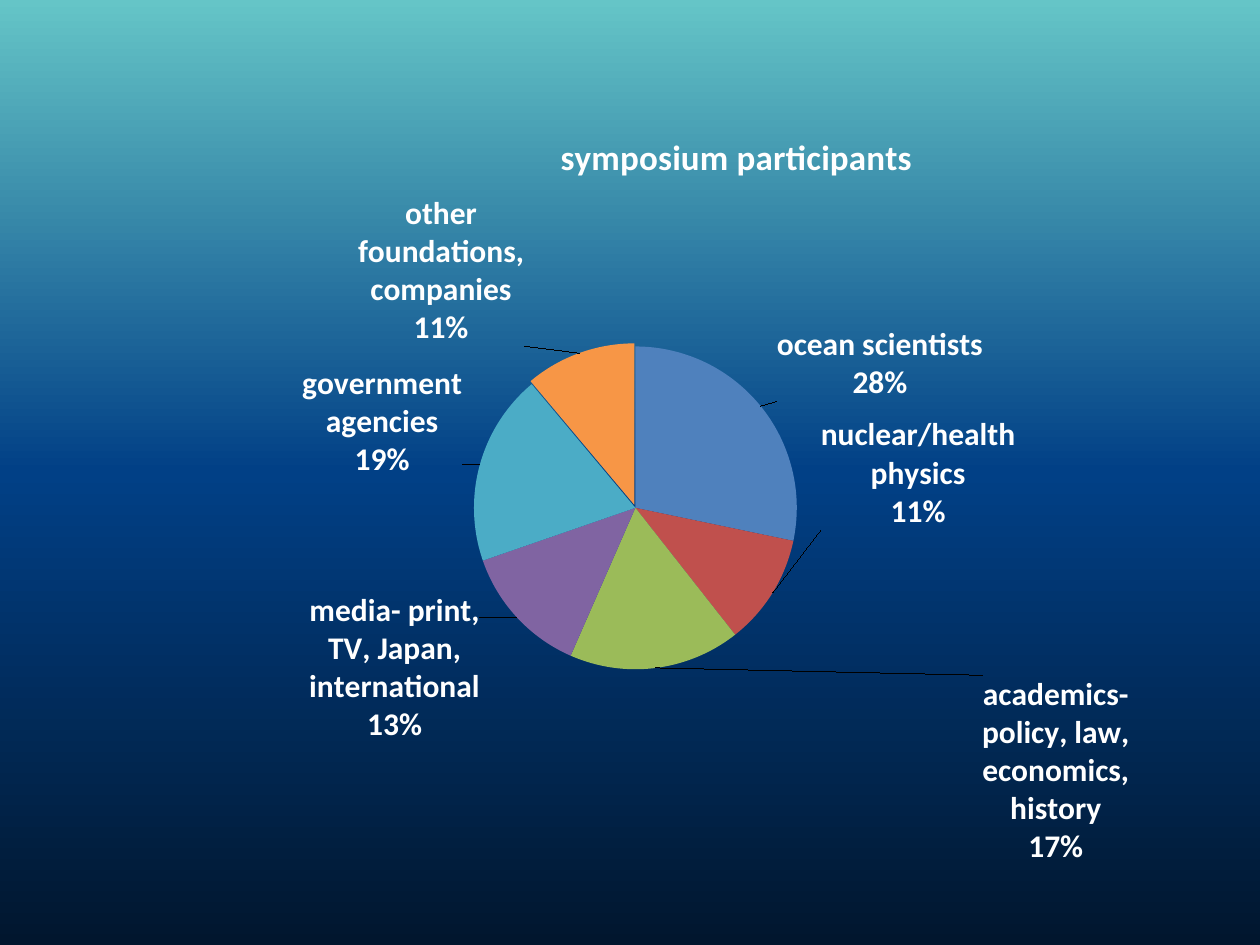
from copy import deepcopy

from lxml import etree
from pptx import Presentation
from pptx import util as u
from pptx.chart.data import CategoryChartData
from pptx.dml.color import RGBColor
from pptx.enum import chart as charts
from pptx.oxml.ns import qn

FONT = "Calibri"
WHITE = "FFFFFF"
BACKGROUND = ["65C5C7", "014086", "01162E"]
# Category, percentage, slice colour, label shift as fractions of the chart.
PARTICIPANTS = [
    ("ocean scientists", 28, "4F81BD", (0.01, 0)),
    ("nuclear/health physics", 11, "C0504D", (0.04, -0.23)),
    ("academics- policy, law, economics, history", 17, "9BBB59", (0.31, 0)),
    ("media- print, TV, Japan, international", 13, "8064A2", (-0.03, -0.04)),
    ("government agencies", 19, "4BACC6", (-0.01, 0.02)),
    ("other foundations, companies", 11, "F79646", (-0.05, 0)),
]


def color(value):
    """Turn a hex string into a colour."""
    return RGBColor.from_string(value)


def format_font(font, size, bold=False, fill=WHITE):
    """Set the typeface, size, weight and colour of a font."""
    font.name = FONT
    font.size = u.Pt(size)
    font.bold = bold
    font.color.rgb = color(fill)


def add_text(frame, content, **style):
    """Put formatted text in a frame."""
    run = frame.paragraphs[0].add_run()
    run.text = content
    format_font(run.font, **style)


def make_layout(target=None, **values):
    """Build a manual chart layout from fractions of the chart."""
    layout = etree.Element(qn("c:layout"))
    manual = etree.SubElement(layout, qn("c:manualLayout"))
    if target:
        etree.SubElement(manual, qn("c:layoutTarget")).set("val", target)
    if target or "w" not in values and values.pop("edge", False):
        for mode in ("xMode", "yMode"):
            etree.SubElement(manual, qn(f"c:{mode}")).set("val", "edge")
    for name, value in values.items():
        etree.SubElement(manual, qn(f"c:{name}")).set("val", str(value))
    return layout


def paint_background(slide):
    """Fill the slide with a vertical three-colour gradient."""
    fill = slide.background.fill
    fill.gradient()
    fill.gradient_angle = 270
    stops = slide.element.find(".//" + qn("a:gsLst"))
    stops.insert(1, deepcopy(stops[0]))
    for index, (stop, value) in enumerate(zip(fill.gradient_stops, BACKGROUND)):
        stop.position = index / 2
        stop.color.rgb = color(value)


def add_title(chart, content):
    """Write the chart title and place it right of centre."""
    add_text(chart.chart_title.text_frame, content, size=20, bold=True)
    title = chart.element.find(".//" + qn("c:title"))
    for old in title.findall(qn("c:layout")):
        title.remove(old)
    title.find(qn("c:tx")).addnext(make_layout(edge=True, x=0.41, y=0.04))
    chart.chart_title.include_in_layout = False


def show_labels(element):
    """Show category and percentage, one under the other."""
    for name in ("Val", "CatName", "Percent", "SerName", "LegendKey"):
        flag = element.find(qn(f"c:show{name}"))
        flag.set("val", "1" if name in ("CatName", "Percent") else "0")
    last = element.find(qn("c:showBubbleSize"))
    if last is None:
        last = element.find(qn("c:showPercent"))
    separator = etree.Element(qn("c:separator"))
    separator.text = "\n"
    last.addnext(separator)


def format_slices(chart):
    """Colour the slices and place their labels."""
    series = chart.plots[0].series[0]
    format_font(series.data_labels.font, 18, bold=True)
    for index, (_, _, fill, _) in enumerate(PARTICIPANTS):
        point = series.points[index]
        point.format.fill.solid()
        point.format.fill.fore_color.rgb = color(fill)
        format_font(point.data_label.font, 18, bold=True)
        point.data_label.position = charts.XL_LABEL_POSITION.OUTSIDE_END
    labels = chart.element.find(".//" + qn("c:ser")).find(qn("c:dLbls"))
    show_labels(labels)
    for label, (_, _, _, (x, y)) in zip(labels.findall(qn("c:dLbl")), PARTICIPANTS):
        show_labels(label)
        label.find(qn("c:idx")).addnext(make_layout(x=x, y=y))
    leader = labels.find(qn("c:showLeaderLines"))
    if leader is None:
        leader = etree.SubElement(labels, qn("c:showLeaderLines"))
    leader.set("val", "1")
    last_point = chart.element.findall(".//" + qn("c:dPt"))[-1]
    explosion = etree.Element(qn("c:explosion"))
    explosion.set("val", "2")
    last_point.find(qn("c:spPr")).addprevious(explosion)


def add_participants_chart(slide, left, top, width, height):
    """Add the pie of symposium participants in the given box."""
    data = CategoryChartData()
    data.categories = [row[0] for row in PARTICIPANTS]
    data.add_series("Series 1", [row[1] for row in PARTICIPANTS])
    chart = slide.shapes.add_chart(
        charts.XL_CHART_TYPE.PIE, left, top, width, height, data
    ).chart
    format_font(chart.font, 14)
    chart.has_legend = False
    chart.plots[0].vary_by_categories = True
    add_title(chart, " symposium participants")
    format_slices(chart)
    area = chart.element.find(".//" + qn("c:plotArea"))
    for old in area.findall(qn("c:layout")):
        area.remove(old)
    area.insert(0, make_layout("inner", x=0.34, y=0.32, w=0.31, h=0.41))


def main():
    """Build and save the slide."""
    presentation = Presentation()
    presentation.slide_width = u.Inches(10)
    presentation.slide_height = u.Inches(7.5)
    slide = presentation.slides.add_slide(presentation.slide_layouts[6])
    paint_background(slide)
    box = [u.Inches(value) for value in (0.92, 0.75, 8.33, 6.25)]
    add_participants_chart(slide, *box)
    presentation.save("out.pptx")


if __name__ == "__main__":
    main()
